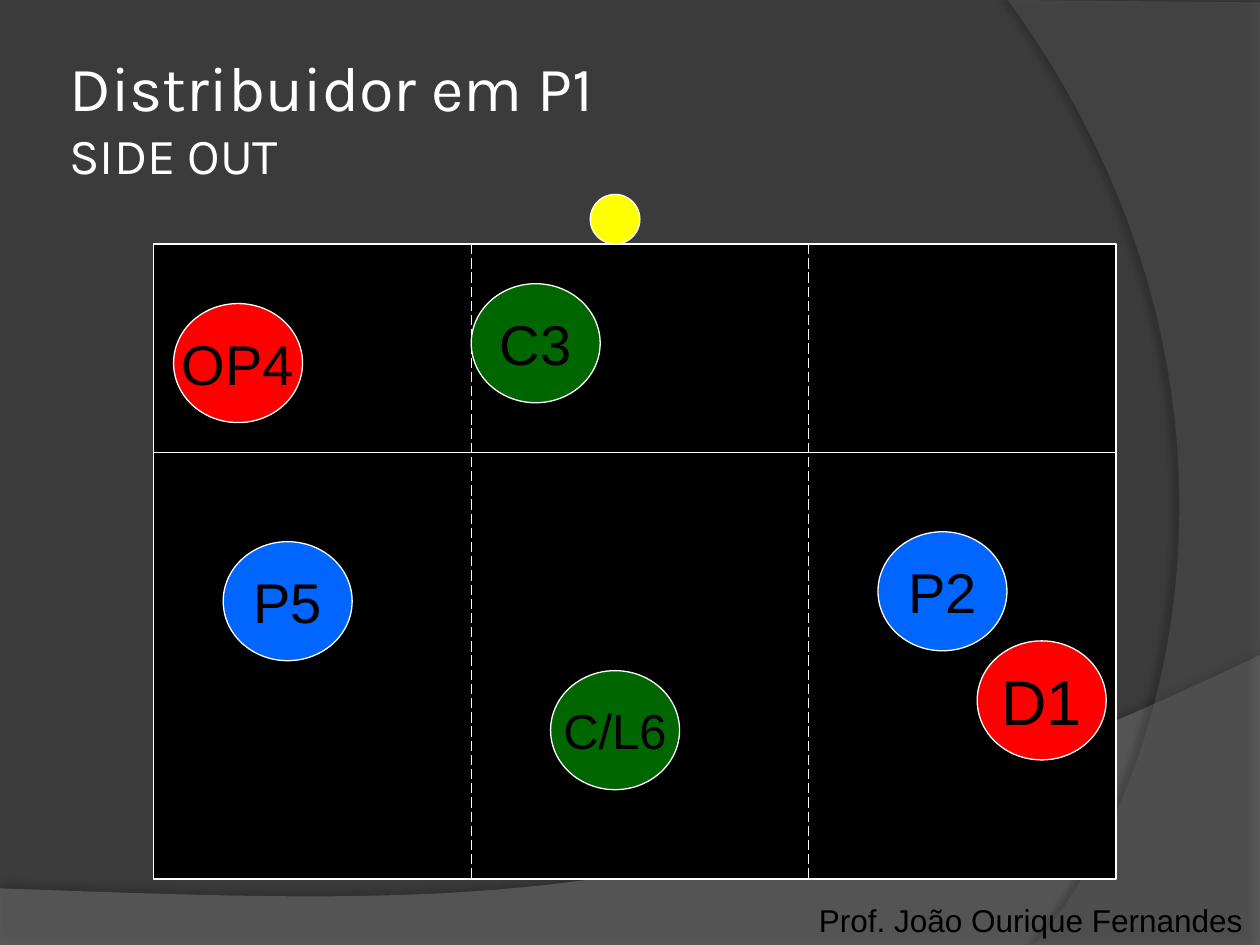
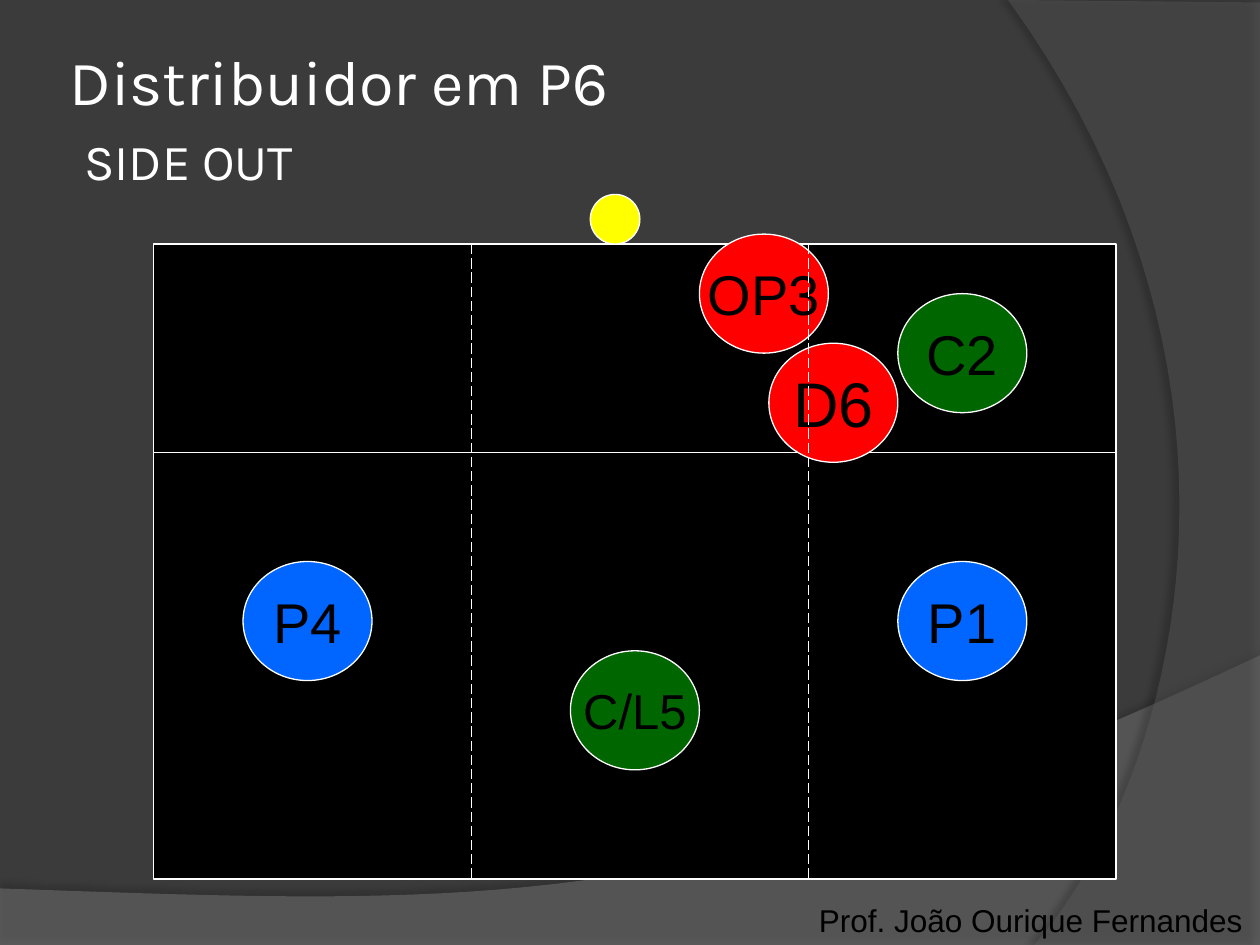
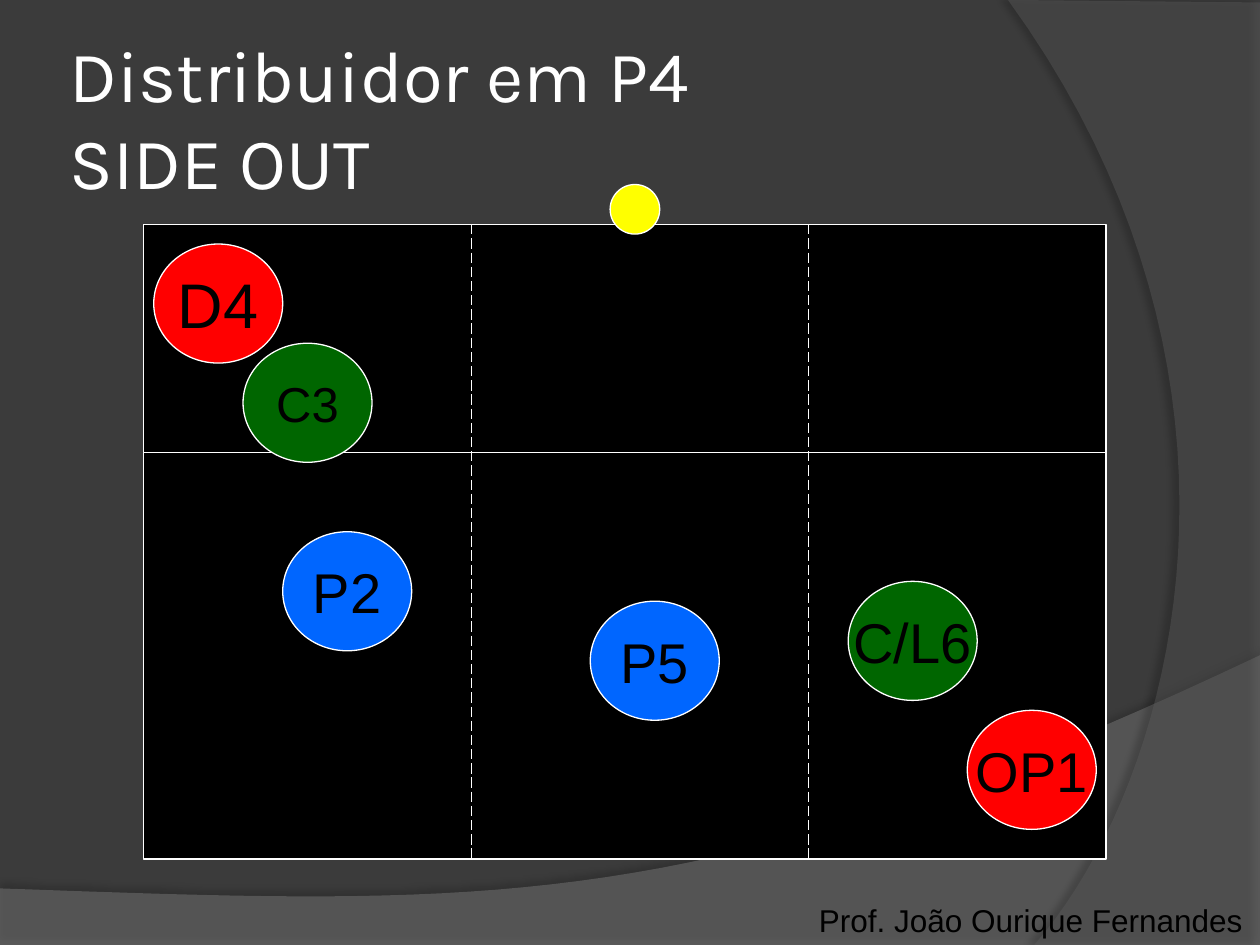
"""Build three volleyball side-out rotation slides."""
import lxml.etree
import pptx
import pptx.dml.color
import pptx.enum.dml
import pptx.enum.shapes
import pptx.enum.text
import pptx.oxml.ns
import pptx.util

Cm = pptx.util.Cm
Pt = pptx.util.Pt
RGBColor = pptx.dml.color.RGBColor
Shape = pptx.enum.shapes.MSO_SHAPE
qn = pptx.oxml.ns.qn

BACKGROUND = RGBColor(0x3B, 0x3B, 0x3B)
BOTTOM_BAND = RGBColor(0x7F, 0x7F, 0x7F)
SIDE_BAND = RGBColor(0x5E, 0x5E, 0x5E)
WHITE = RGBColor(0xFF, 0xFF, 0xFF)
BLACK = RGBColor(0x00, 0x00, 0x00)
RED = RGBColor(0xFF, 0x00, 0x00)
GREEN = RGBColor(0x00, 0x66, 0x00)
BLUE = RGBColor(0x00, 0x66, 0xFF)
YELLOW = RGBColor(0xFF, 0xFF, 0x00)

TITLE_FONT = "Karla"
BODY_FONT = "Arial"
PAGE_WIDTH, PAGE_HEIGHT = 25.4, 19.05
COURT_WIDTH, COURT_HEIGHT = 19.4, 12.8
ATTACK_LINE_TOP = 9.12
ZONE_LINES = (9.5, 16.3)
PLAYER_WIDTH, PLAYER_HEIGHT = 2.6, 2.4
BALL_SIZE = 1
CURVE_STEPS = 40

ROTATIONS = [
    {
        "title": "Distribuidor em P1", "sizes": (36, 28.8), "indent": 0, "gap": 0,
        "court": (3.1, 4.92), "ball": (11.9, 3.92),
        "players": [
            ("D1", RED, 19.7, 12.92, 36), ("OP4", RED, 3.5, 6.12, 32),
            ("C3", GREEN, 9.5, 5.72, 32), ("C/L6", GREEN, 11.1, 13.52, 28),
            ("P2", BLUE, 17.7, 10.72, 32), ("P5", BLUE, 4.5, 10.92, 32),
        ],
    },
    {
        "title": "Distribuidor em P6", "sizes": (36, 28.8), "indent": 0.3, "gap": 7,
        "court": (3.1, 4.92), "ball": (11.9, 3.92),
        "players": [
            ("D6", RED, 15.5, 6.92, 36), ("OP3", RED, 14.1, 4.72, 32),
            ("C2", GREEN, 18.1, 5.92, 32), ("C/L5", GREEN, 11.5, 13.12, 28),
            ("P1", BLUE, 18.1, 11.32, 32), ("P4", BLUE, 4.9, 11.32, 32),
        ],
    },
    {
        "title": "Distribuidor em P4", "sizes": (41.4, 41.4), "indent": 0, "gap": 0,
        "court": (2.9, 4.52), "ball": (12.3, 3.72),
        "players": [
            ("D4", RED, 3.1, 4.92, 36), ("OP1", RED, 19.5, 14.32, 32),
            ("C/L6", GREEN, 17.1, 11.72, 32), ("C3", GREEN, 4.9, 6.92, 28),
            ("P5", BLUE, 11.9, 12.12, 32), ("P2", BLUE, 5.7, 10.72, 32),
        ],
    },
]


def curve(start, control_1, control_2, end):
    """Return points along a cubic curve."""
    points = []
    for step in range(CURVE_STEPS + 1):
        t = step / CURVE_STEPS
        weights = ((1 - t) ** 3, 3 * t * (1 - t) ** 2, 3 * t * t * (1 - t), t ** 3)
        corners = (start, control_1, control_2, end)
        points.append(tuple(sum(w * corner[axis] for w, corner in zip(weights, corners))
                            for axis in (0, 1)))
    return points


def add_band(page, points, color, opacity, shadow_opacity, distance, angle):
    """Draw a translucent band with a soft shadow."""
    corners = [(Cm(x), Cm(y)) for x, y in points]
    builder = page.shapes.build_freeform(*corners[0])
    builder.add_line_segments(corners[1:], close=True)
    band = builder.convert_to_shape()
    band.fill.solid()
    band.fill.fore_color.rgb = color
    band.line.fill.background()
    band.shadow.inherit = False
    fill_color = band.element.spPr.find(".//" + qn("a:srgbClr"))
    lxml.etree.SubElement(fill_color, qn("a:alpha"), val=str(opacity * 1000))
    effects = band.element.spPr.find(qn("a:effectLst"))
    shadow = lxml.etree.SubElement(
        effects, qn("a:outerShdw"), blurRad=str(Pt(4)), dist=str(Pt(distance)),
        dir=str(angle * 60000), algn="ctr", rotWithShape="0")
    shade = lxml.etree.SubElement(shadow, qn("a:srgbClr"), val=str(BLACK))
    lxml.etree.SubElement(shade, qn("a:alpha"), val=str(shadow_opacity * 1000))
    return band


def add_layout_bands(layout, page):
    """Place the two decorative bands on the shared layout."""
    bottom = [(0, 17.91), (0, 19.07), (25.4, 19.07)]
    bottom += curve((25.4, 13.21), (14.2, 18.52), (9.93, 18.26), (0, 17.91))
    side = [(25.4, 0.05), (25.4, 19.05)]
    side += curve((20.85, 19.05), (23.75, 15.72), (25.86, 7.62), (20.32, 0))
    bands = (add_band(page, bottom, BOTTOM_BAND, 45, 35, 3.5, 270),
             add_band(page, side, SIDE_BAND, 40, 45, 4, 180))
    for band in bands:
        layout.shapes.element.append(band.element)


def format_text(paragraph, font, size, color):
    """Apply font, size and colour to every run."""
    for span in paragraph.runs:
        span.font.name = font
        span.font.size = Pt(size)
        span.font.color.rgb = color


def set_title(page, rotation):
    """Fill and place the title placeholder."""
    title = page.shapes.title
    title.left, title.top, title.width, title.height = map(Cm, (1.27, 0.76, 20.75, 3.18))
    frame = title.text_frame
    frame.text = rotation["title"] + "\nSIDE OUT"
    frame.word_wrap = True
    frame.auto_size = pptx.enum.text.MSO_AUTO_SIZE.NONE
    frame.vertical_anchor = pptx.enum.text.MSO_ANCHOR.MIDDLE
    frame.margin_left = frame.margin_right = Cm(0.13)
    frame.margin_top = frame.margin_bottom = Cm(0.13)
    for para, size in zip(frame.paragraphs, rotation["sizes"]):
        para.alignment = pptx.enum.text.PP_ALIGN.LEFT
        format_text(para, TITLE_FONT, size, WHITE)
    subtitle = frame.paragraphs[1]
    subtitle.space_before = Pt(rotation["gap"])
    subtitle._p.get_or_add_pPr().set("marL", str(Cm(rotation["indent"])))


def add_figure(page, kind, left, top, width, height, color):
    """Draw a filled shape with a thin white outline."""
    figure = page.shapes.add_shape(kind, Cm(left), Cm(top), Cm(width), Cm(height))
    figure.shadow.inherit = False
    figure.fill.solid()
    figure.fill.fore_color.rgb = color
    figure.line.color.rgb = WHITE
    figure.line.width = Pt(0.75)
    return figure


def add_line(page, start, end, dash=None):
    """Draw a thin white court line."""
    line = page.shapes.add_connector(
        pptx.enum.shapes.MSO_CONNECTOR.STRAIGHT, *map(Cm, start + end))
    line.line.color.rgb = WHITE
    line.line.width = Pt(0.75)
    if dash:
        line.line.dash_style = dash
    lxml.etree.SubElement(line.element.spPr, qn("a:effectLst"))


def add_player(page, label, color, left, top, size):
    """Draw a labelled player token."""
    player = add_figure(page, Shape.OVAL, left, top, PLAYER_WIDTH, PLAYER_HEIGHT, color)
    frame = player.text_frame
    frame.text = label
    frame.word_wrap = False
    frame.vertical_anchor = pptx.enum.text.MSO_ANCHOR.MIDDLE
    para = frame.paragraphs[0]
    para.alignment = pptx.enum.text.PP_ALIGN.CENTER
    format_text(para, BODY_FONT, size, BLACK)


def add_court(page, rotation):
    """Draw the court, its lines, the players and the ball."""
    left, top = rotation["court"]
    add_figure(page, Shape.RECTANGLE, left, top, COURT_WIDTH, COURT_HEIGHT, BLACK)
    add_line(page, (left, ATTACK_LINE_TOP), (left + COURT_WIDTH, ATTACK_LINE_TOP))
    for player in rotation["players"]:
        add_player(page, *player)
    for x in ZONE_LINES:
        add_line(page, (x, top), (x, top + COURT_HEIGHT),
                 pptx.enum.dml.MSO_LINE.LONG_DASH)
    add_figure(page, Shape.OVAL, *rotation["ball"], BALL_SIZE, BALL_SIZE, YELLOW)


def add_credit(page):
    """Write the teacher's name at the bottom right."""
    box = page.shapes.add_textbox(Cm(16.26), Cm(18.03), Cm(9.14), Cm(1.02))
    frame = box.text_frame
    frame.text = "Prof. João Ourique Fernandes"
    frame.word_wrap = False
    frame.auto_size = pptx.enum.text.MSO_AUTO_SIZE.SHAPE_TO_FIT_TEXT
    format_text(frame.paragraphs[0], BODY_FONT, 18, BLACK)


def main():
    """Build and save the deck."""
    deck = pptx.Presentation()
    deck.slide_width, deck.slide_height = Cm(PAGE_WIDTH), Cm(PAGE_HEIGHT)
    layout = deck.slide_layouts.get_by_name("Title Only")
    layout.background.fill.solid()
    layout.background.fill.fore_color.rgb = BACKGROUND
    pages = [deck.slides.add_slide(layout) for _ in ROTATIONS]
    add_layout_bands(layout, pages[0])
    for page, rotation in zip(pages, ROTATIONS):
        set_title(page, rotation)
        add_court(page, rotation)
        add_credit(page)
    deck.save("out.pptx")


if __name__ == "__main__":
    main()
